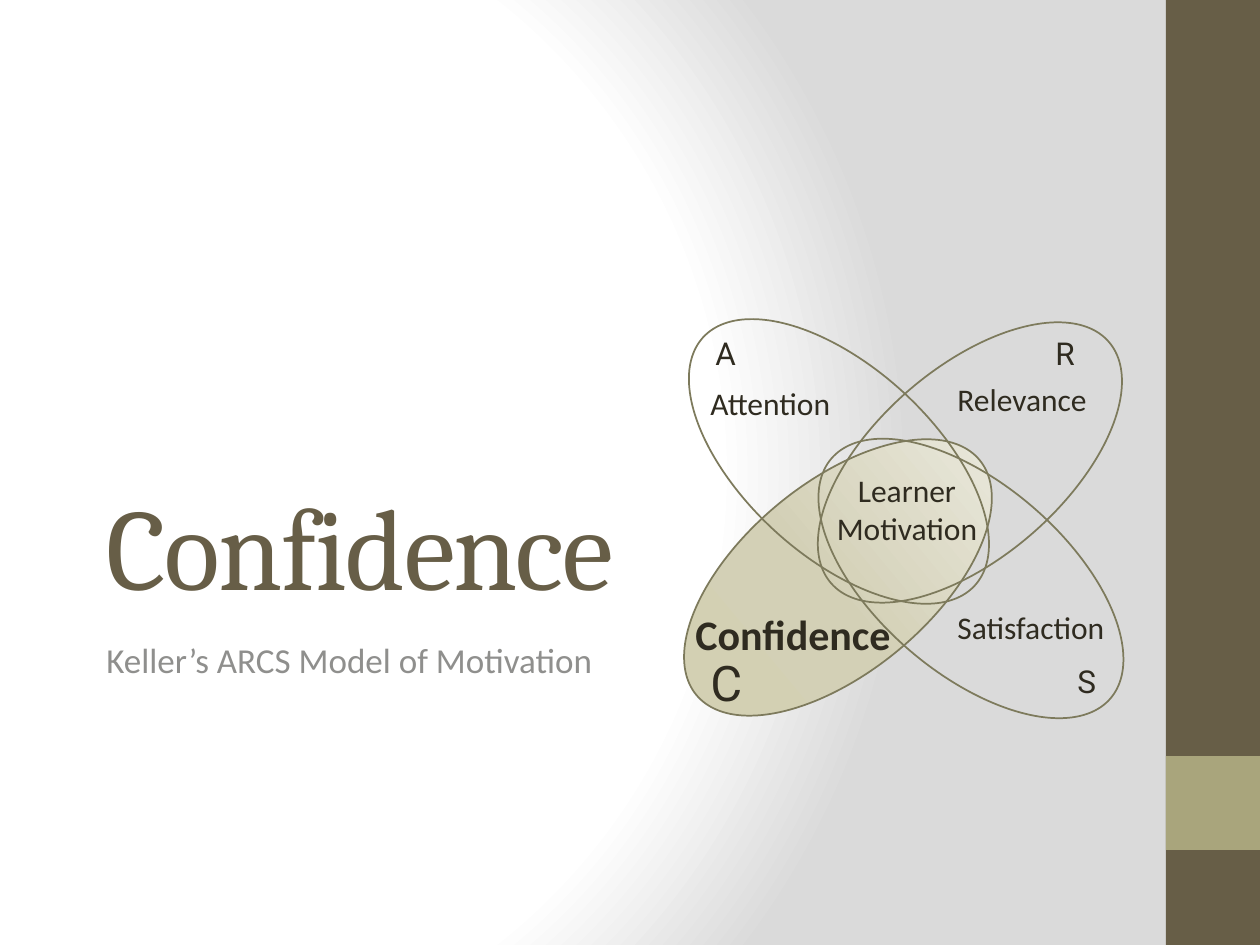
"""Build the Confidence title slide with the ARCS motivation diagram."""
from pptx import Presentation
from pptx.dml.color import RGBColor
from pptx.enum.shapes import MSO_SHAPE
from pptx.enum.text import MSO_ANCHOR, MSO_AUTO_SIZE, PP_ALIGN
from pptx.oxml import parse_xml
from pptx.oxml.ns import nsdecls, qn
from pptx.util import Pt

PX = 914400 // 126
INK, OLIVE, OUTLINE = "2F2B20", "675E47", "7D7A5C"
colour = RGBColor.from_string


def apply_gradient(parent, stops, direction):
    stop_xml = "".join(
        f'<a:gs pos="{position * 1000}"><a:srgbClr val="{value}"/></a:gs>'
        for position, value in stops
    )
    gradient = parse_xml(
        f'<a:gradFill {nsdecls("a")} rotWithShape="1">'
        f"<a:gsLst>{stop_xml}</a:gsLst>{direction}</a:gradFill>"
    )
    solid = parent.find(qn("a:solidFill"))
    parent.replace(solid, gradient)


def add_text(bounds, lines, font_format):
    box = slide.shapes.add_textbox(*(n * PX for n in bounds))
    frame = box.text_frame
    frame.text = "\n".join(lines)
    for paragraph in frame.paragraphs:
        for run in paragraph.runs:
            for attribute, value in font_format.items():
                setattr(run.font, attribute, value)
            run.font.color.rgb = colour(INK)
    return frame


deck = Presentation()
deck.slide_width, deck.slide_height = 1260 * PX, 945 * PX
slide = deck.slides.add_slide(deck.slide_layouts[6])

slide.background.fill.solid()
apply_gradient(
    slide.element.find(".//" + qn("p:bgPr")),
    [(0, "FFFFFF"), (75, "FFFFFF"), (100, "DADADA")],
    '<a:path path="circle"><a:fillToRect l="20000" t="50000" r="100000" b="50000"/></a:path>',
)

for top, height, shade in [(0, 945, OLIVE), (756, 94, "A9A57C")]:
    band = slide.shapes.add_shape(
        MSO_SHAPE.RECTANGLE, 1166 * PX, top * PX, 94 * PX, height * PX
    )
    band.shadow.inherit = False
    band.fill.solid()
    band.fill.fore_color.rgb = colour(shade)
    band.line.fill.background()

title = add_text((94, 262, 1040, 358), ["Confidence"], {"name": "Cambria", "size": Pt(66)})
title.word_wrap = True
title.vertical_anchor = MSO_ANCHOR.BOTTOM
title_run = title.paragraphs[0].runs[0]
title_run.font.color.rgb = colour(OLIVE)
title_run.font._element.set("spc", "-100")

subtitle = add_text(
    (94, 632, 891, 147),
    ["Keller’s ARCS Model of Motivation"],
    {"name": "Calibri", "size": Pt(20)},
)
subtitle.word_wrap = True
subtitle.paragraphs[0].runs[0].font.color.rgb = colour("8F8F8D")

petals = [
    ("Confidence", 654, 483, 320.3),
    ("Relevance", 786, 368, 319),
    ("Attention", 655, 367, 42.4),
    ("Satisfaction", 787, 484, 40.7),
]
for factor, left, top, angle in petals:
    petal = slide.shapes.add_shape(MSO_SHAPE.OVAL, left * PX, top * PX, 368 * PX, 189 * PX)
    petal.rotation = angle
    petal.shadow.inherit = False
    petal.line.color.rgb = colour(OUTLINE)
    petal.line.width = Pt(1)
    if factor == "Confidence":
        petal.fill.solid()
        apply_gradient(
            petal.element.spPr,
            [(0, "D2CFB1"), (47, "D3D0B6"), (100, "F0EFE7")],
            '<a:lin ang="0" scaled="0"/>',
        )
    else:
        petal.fill.background()

letter = {"name": "Roboto", "size": Pt(18)}
word = {"name": "Calibri", "size": Pt(18)}
labels = [
    ((703, 328, 49, 50), ["A"], letter),
    ((698, 378, 147, 50), ["Attention"], word),
    ((1043, 328, 47, 50), ["R"], letter),
    ((945, 374, 159, 50), ["Relevance"], word),
    ((698, 646, 57, 72), ["C"], letter | {"size": Pt(28)}),
    ((683, 602, 223, 63), ["Confidence"], word | {"size": Pt(24), "bold": True}),
    ((945, 602, 174, 50), ["Satisfaction"], word),
    ((1065, 656, 44, 50), ["S"], letter),
    ((823, 465, 168, 89), ["Learner", "Motivation"], word),
]
for bounds, lines, font_format in labels:
    label = add_text(bounds, lines, font_format)
    label.word_wrap = False
    label.auto_size = MSO_AUTO_SIZE.SHAPE_TO_FIT_TEXT
    if len(lines) > 1:
        for paragraph in label.paragraphs:
            paragraph.alignment = PP_ALIGN.CENTER

deck.save("out.pptx")
